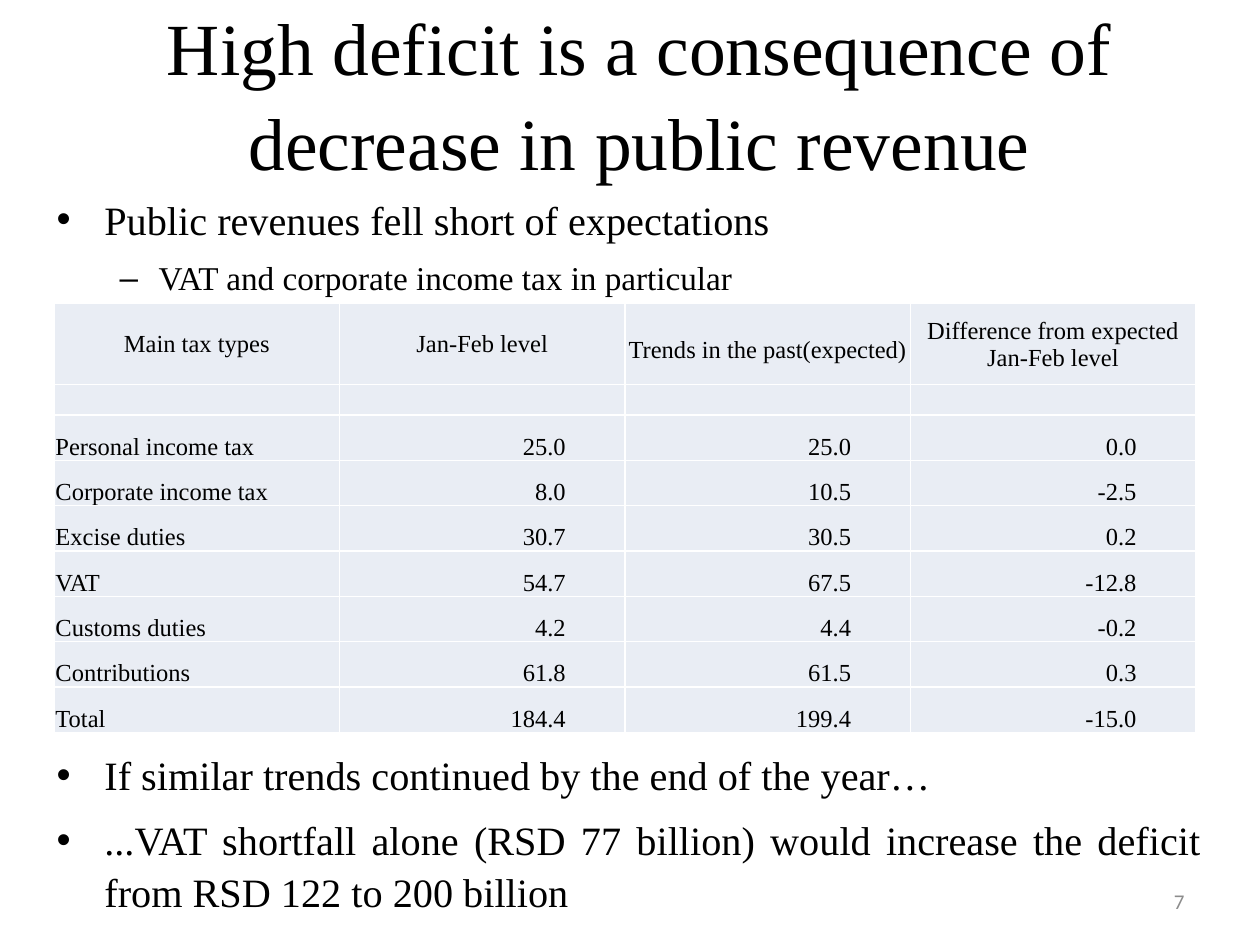
from dataclasses import dataclass

import lxml.etree
import pptx
import pptx.dml.color
import pptx.enum.text
import pptx.oxml.ns
import pptx.util

Inches = pptx.util.Inches
Pt = pptx.util.Pt
Align = pptx.enum.text.PP_ALIGN
Anchor = pptx.enum.text.MSO_ANCHOR
qn = pptx.oxml.ns.qn

COLORS = {"text": "000000", "number": "8C8C8C", "cell": "E9EDF4", "border": "FFFFFF"}
SERIF = "Times New Roman"
CELL_SIZE = 14


@dataclass(frozen=True)
class Level:
    size: float
    margin: float
    hanging: float
    mark: str


@dataclass(frozen=True)
class Bullet:
    text: str
    level: Level


MAIN = Level(23, 0.38, 0.38, "•")
SUB = Level(19, 0.81, 0.31, "–")

OPENING = [
    Bullet("Public revenues fell short of expectations", MAIN),
    Bullet("VAT and corporate income tax in particular", SUB),
]
CONCLUSION = [
    Bullet("If similar trends continued by the end of the year…", MAIN),
    Bullet("...VAT shortfall alone (RSD 77 billion) would increase the deficit "
           "from RSD 122 to 200 billion", MAIN),
]
TAX_ROWS = [
    ("Main tax types", "Jan-Feb level", "Trends in the past(expected)",
     "Difference from expected Jan-Feb level"),
    ("", "", "", ""),
    ("Personal income tax", "25.0", "25.0", "0.0"),
    ("Corporate income tax", "8.0", "10.5", "-2.5"),
    ("Excise duties", "30.7", "30.5", "0.2"),
    ("VAT", "54.7", "67.5", "-12.8"),
    ("Customs duties", "4.2", "4.4", "-0.2"),
    ("Contributions", "61.8", "61.5", "0.3"),
    ("Total", "184.4", "199.4", "-15.0"),
]
ROW_HEIGHTS = [0.64, 0.24] + [0.36] * 7


def rgb(name: str) -> pptx.dml.color.RGBColor:
    return pptx.dml.color.RGBColor.from_string(COLORS[name])


def write(para, text: str, *, size: float, font: str = SERIF,
          color: str = "text", align=Align.LEFT) -> None:
    para.alignment = align
    span = para.add_run()
    span.text = text
    span.font.size = Pt(size)
    span.font.name = font
    span.font.color.rgb = rgb(color)


def place(box, left: float, top: float, width: float, height: float) -> None:
    box.left, box.top = Inches(left), Inches(top)
    box.width, box.height = Inches(width), Inches(height)


def add_box(page, left: float, top: float, width: float, height: float, anchor=Anchor.TOP):
    box = page.shapes.add_textbox(Inches(left), Inches(top), Inches(width), Inches(height))
    box.text_frame.word_wrap = True
    box.text_frame.vertical_anchor = anchor
    return box.text_frame


def add_bullets(page, top: float, height: float, bullets: list[Bullet]) -> None:
    frame = add_box(page, 0.35, top, 9.29, height)
    for index, bullet in enumerate(bullets):
        level = bullet.level
        para = frame.add_paragraph() if index else frame.paragraphs[0]
        write(para, bullet.text, size=level.size, align=Align.JUSTIFY)
        para.level = 1 if level is SUB else 0
        para.line_spacing = 1.07
        para.space_before = Pt(level.size * 0.2)
        para.space_after = Pt(3)
        properties = para._p.get_or_add_pPr()
        properties.set("marL", str(Inches(level.margin)))
        properties.set("indent", str(-Inches(level.hanging)))
        lxml.etree.SubElement(properties, qn("a:buFont"), typeface="Arial")
        lxml.etree.SubElement(properties, qn("a:buChar"), char=level.mark)


def add_borders(cell) -> None:
    properties = cell._tc.get_or_add_tcPr()
    for index, side in enumerate(("lnL", "lnR", "lnT", "lnB")):
        line = lxml.etree.Element(qn(f"a:{side}"), w=str(Pt(1)))
        fill = lxml.etree.SubElement(line, qn("a:solidFill"))
        lxml.etree.SubElement(fill, qn("a:srgbClr"), val=COLORS["border"])
        properties.insert(index, line)


def fill_cell(cell, text: str, row: int, column: int) -> None:
    is_value = row > 1 and column > 0
    cell.fill.solid()
    cell.fill.fore_color.rgb = rgb("cell")
    add_borders(cell)
    cell.margin_left = cell.margin_top = Inches(0.01)
    cell.margin_right = Inches(0.47 if is_value else 0.01)
    cell.margin_bottom = 0
    cell.vertical_anchor = Anchor.BOTTOM if row else Anchor.MIDDLE
    para = cell.text_frame.paragraphs[0]
    if text:
        align = Align.CENTER if row == 0 else Align.RIGHT if is_value else Align.LEFT
        write(para, text, size=CELL_SIZE, align=align)
    else:
        lxml.etree.SubElement(para._p, qn("a:endParaRPr"), sz=str(CELL_SIZE * 100))


def add_tax_table(page) -> None:
    frame = page.shapes.add_table(len(TAX_ROWS), len(TAX_ROWS[0]), Inches(0.43),
                                  Inches(2.41), Inches(9.06), Inches(sum(ROW_HEIGHTS)))
    table = frame.table
    table.first_row = table.horz_banding = False
    for row, (values, height) in enumerate(zip(TAX_ROWS, ROW_HEIGHTS)):
        table.rows[row].height = Inches(height)
        for column, text in enumerate(values):
            fill_cell(table.cell(row, column), text, row, column)
    write(table.cell(0, 2).text_frame.paragraphs[0], " ", size=24, align=Align.CENTER)


def main() -> None:
    deck = pptx.Presentation()
    deck.slide_width, deck.slide_height = Inches(10), Inches(7.5)
    page = deck.slides.add_slide(deck.slide_layouts[5])

    title = page.shapes.title
    place(title, 0.51, 0.21, 9.13, 1.02)
    title.text_frame.vertical_anchor = Anchor.MIDDLE
    heading = title.text_frame.paragraphs[0]
    write(heading, "High deficit is a consequence of decrease in public revenue",
          size=42, align=Align.CENTER)
    heading.line_spacing = 1.07

    add_bullets(page, 1.47, 1.02, OPENING)
    number = add_box(page, 7.17, 6.95, 2.33, 0.4, Anchor.MIDDLE)
    write(number.paragraphs[0], "7", size=12, font="Calibri", color="number", align=Align.RIGHT)
    add_tax_table(page)
    add_bullets(page, 5.88, 1.34, CONCLUSION)
    deck.save("out.pptx")


if __name__ == "__main__":
    main()
